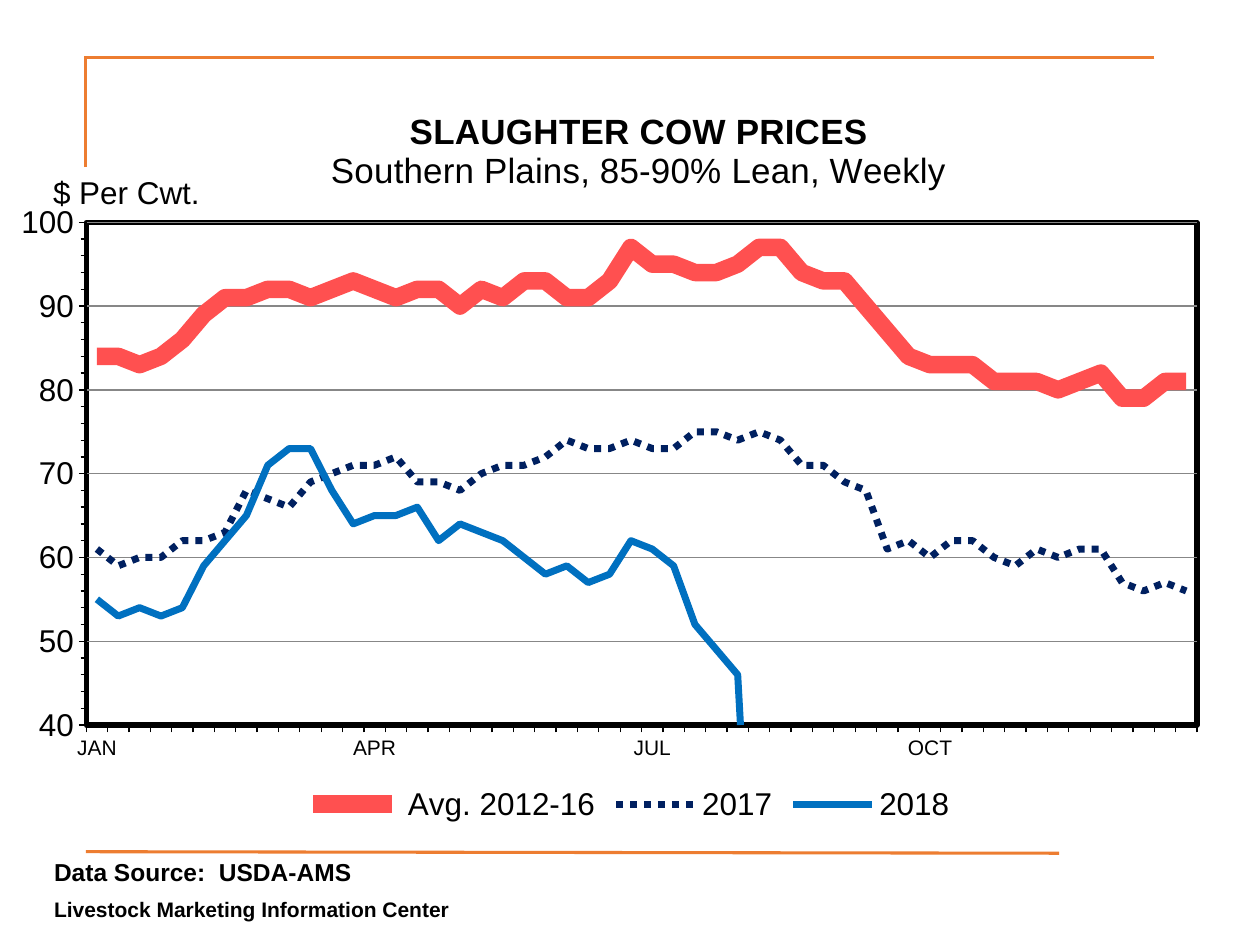
import pptx
import pptx.chart.data
import pptx.dml.color
import pptx.enum.chart
import pptx.enum.dml
import pptx.enum.shapes
import pptx.oxml
import pptx.oxml.ns
import pptx.util
from pptx.util import Cm

COLORS = {
    "ink": "000000",
    "paper": "FFFFFF",
    "rule": "ED7D31",
    "grid": "878787",
    "average": "FF5050",
    "last_year": "002060",
    "this_year": "0070C0",
}
WEEKS = 52
QUARTERS = {0: "JAN", 13: "APR", 26: "JUL", 39: "OCT"}
PRICES = [
    (" Avg. 2012-16", "average", 10, None,
     [84, 84, 83, 84, 86, 89, 91, 91, 92, 92, 91, 92, 93, 92, 91, 92, 92, 90,
      92, 91, 93, 93, 91, 91, 93, 97, 95, 95, 94, 94, 95, 97, 97, 94, 93, 93,
      90, 87, 84, 83, 83, 83, 81, 81, 81, 80, 81, 82, 79, 79, 81, 81]),
    ("2017", "last_year", 4, pptx.enum.dml.MSO_LINE.ROUND_DOT,
     [61, 59, 60, 60, 62, 62, 63, 68, 67, 66, 69, 70, 71, 71, 72, 69, 69, 68,
      70, 71, 71, 72, 74, 73, 73, 74, 73, 73, 75, 75, 74, 75, 74, 71, 71, 69,
      68, 61, 62, 60, 62, 62, 60, 59, 61, 60, 61, 61, 57, 56, 57, 56]),
    ("2018", "this_year", 4, None,
     [55, 53, 54, 53, 54, 59, 62, 65, 71, 73, 73, 68, 64, 65, 65, 66, 62, 64,
      63, 62, 60, 58, 59, 57, 58, 62, 61, 59, 52, 49, 46]),
]


def rgb(name):
    return pptx.dml.color.RGBColor.from_string(COLORS[name])


def apply(target, formats):
    for attribute, value in formats.items():
        setattr(target, attribute, value)


def style_font(font, size, bold=False):
    apply(font, {"name": "Arial", "size": pptx.util.Pt(size), "bold": bold})
    font.color.rgb = rgb("ink")


def style_line(line, color, width):
    line.color.rgb = rgb(color)
    line.width = pptx.util.Pt(width)


def chart_xml(body):
    return pptx.oxml.parse_xml(body.replace(
        ">", " " + pptx.oxml.ns.nsdecls("c", "a") + ">", 1))


def set_layout(part, x, y, w=None, h=None, inner=False):
    for old in part.findall(pptx.oxml.ns.qn("c:layout")):
        part.remove(old)
    modes = '<c:layoutTarget val="inner"/>' if inner else ""
    modes += '<c:xMode val="edge"/><c:yMode val="edge"/>'
    sizes = "".join(f'<c:{key} val="{value}"/>'
                    for key, value in zip("xywh", (x, y, w, h))
                    if value is not None)
    layout = chart_xml(f"<c:layout><c:manualLayout>{modes}{sizes}"
                       "</c:manualLayout></c:layout>")
    leading = [pptx.oxml.ns.qn("c:tx"), pptx.oxml.ns.qn("c:legendPos")]
    part.insert(sum(child.tag in leading for child in part), layout)


def add_rules(slide, left, top, width, height):
    ends = [
        (0, 2.25, 0, 0),
        (width, 0.03, 0, 0.03),
        (width - 1.92, height, 0, height - 0.03),
    ]
    for x1, y1, x2, y2 in ends:
        rule = slide.shapes.add_connector(
            pptx.enum.shapes.MSO_CONNECTOR.STRAIGHT,
            Cm(left + x1), Cm(top + y1), Cm(left + x2), Cm(top + y2))
        style_line(rule.line, "rule", 1.75)
        rule._element.spPr.append(pptx.oxml.parse_xml(
            f'<a:effectLst {pptx.oxml.ns.nsdecls("a")}/>'))


def style_titles(chart):
    heading = chart.chart_title.text_frame
    heading.text = "SLAUGHTER COW PRICES\nSouthern Plains, 85-90% Lean, Weekly"
    for paragraph, bold in zip(heading.paragraphs, (True, False)):
        style_font(paragraph.runs[0].font, 20, bold)
    set_layout(chart.chart_title._element, 0.25, 0.03)

    unit = chart.value_axis.axis_title
    unit.text_frame.text = "$ Per Cwt."
    style_font(unit.text_frame.paragraphs[0].runs[0].font, 18)
    unit.text_frame._txBody.bodyPr.set("rot", "0")
    unit.text_frame._txBody.bodyPr.set("vert", "horz")
    set_layout(unit._element, 0.02, 0.11)


def style_axes(chart):
    tick = pptx.enum.chart.XL_TICK_MARK
    formats = {
        chart.category_axis: {"major_tick_mark": tick.OUTSIDE,
                              "minor_tick_mark": tick.NONE,
                              "has_major_gridlines": False},
        chart.value_axis: {"major_tick_mark": tick.OUTSIDE,
                           "minor_tick_mark": tick.OUTSIDE,
                           "minimum_scale": 40, "maximum_scale": 100,
                           "major_unit": 10, "minor_unit": 2,
                           "has_major_gridlines": True},
    }
    for (axis, values), size in zip(formats.items(), (12, 18)):
        apply(axis, values)
        style_font(axis.tick_labels.font, size)
        style_line(axis.format.line, "ink", 0.75)
    style_line(chart.value_axis.major_gridlines.format.line, "grid", 0.75)
    last = chart.category_axis._element.find(
        pptx.oxml.ns.qn("c:noMultiLvlLbl"))
    for tag in ("tickLblSkip", "tickMarkSkip"):
        last.addprevious(chart_xml(f'<c:{tag} val="1"></c:{tag}>'))


def style_plot(chart):
    plot_area = chart._chartSpace.chart.plotArea
    set_layout(plot_area, 0.052, 0.185, 0.913, 0.674, inner=True)
    plot_area.append(chart_xml(
        "<c:spPr><a:solidFill>"
        f'<a:srgbClr val="{COLORS["paper"]}"/></a:solidFill>'
        '<a:ln w="38100"><a:solidFill>'
        f'<a:srgbClr val="{COLORS["ink"]}"/></a:solidFill></a:ln></c:spPr>'))
    blanks = chart._chartSpace.chart.find(pptx.oxml.ns.qn("c:dispBlanksAs"))
    blanks.set("val", "zero")
    for series, (_, color, width, dash, _) in zip(chart.plots[0].series, PRICES):
        series.smooth = False
        series.marker.style = pptx.enum.chart.XL_MARKER_STYLE.NONE
        style_line(series.format.line, color, width)
        if dash:
            series.format.line.dash_style = dash


def add_price_chart(slide, left, top, width, height):
    prices = pptx.chart.data.CategoryChartData(number_format="General")
    prices.categories = [QUARTERS.get(week, "") for week in range(WEEKS)]
    for name, _, _, _, values in PRICES:
        prices.add_series(name, values + [None] * (WEEKS - len(values)))
    chart = slide.shapes.add_chart(
        pptx.enum.chart.XL_CHART_TYPE.LINE,
        Cm(left), Cm(top), Cm(width), Cm(height), prices).chart
    style_font(chart.font, 18)
    chart.plots[0].vary_by_categories = False
    style_titles(chart)
    style_axes(chart)
    style_plot(chart)
    chart.has_legend = True
    apply(chart.legend, {
        "position": pptx.enum.chart.XL_LEGEND_POSITION.BOTTOM,
        "include_in_layout": False})
    style_font(chart.legend.font, 18)
    set_layout(chart.legend._element, 0.23, 0.93, 0.54, 0.07)


def add_source(slide, left, top, width, height):
    source = slide.shapes.add_textbox(
        Cm(left), Cm(top), Cm(width), Cm(height)).text_frame
    source.word_wrap = True
    source.text = "Data Source:  USDA-AMS\nLivestock Marketing Information Center"
    for paragraph, size in zip(source.paragraphs, (14, 12)):
        style_font(paragraph.runs[0].font, size, True)
    source.paragraphs[1].space_before = pptx.util.Pt(6)


def main():
    deck = pptx.Presentation()
    apply(deck, {"slide_width": Cm(25.4), "slide_height": Cm(19.05)})
    slide = deck.slides.add_slide(deck.slide_layouts[6])
    add_rules(slide, 1.73, 1.12, 21.54, 16.08)
    add_price_chart(slide, 0.43, 1.7, 24.56, 15.04)
    add_source(slide, 0.84, 17.15, 11.43, 1.63)
    deck.save("out.pptx")


if __name__ == "__main__":
    main()
